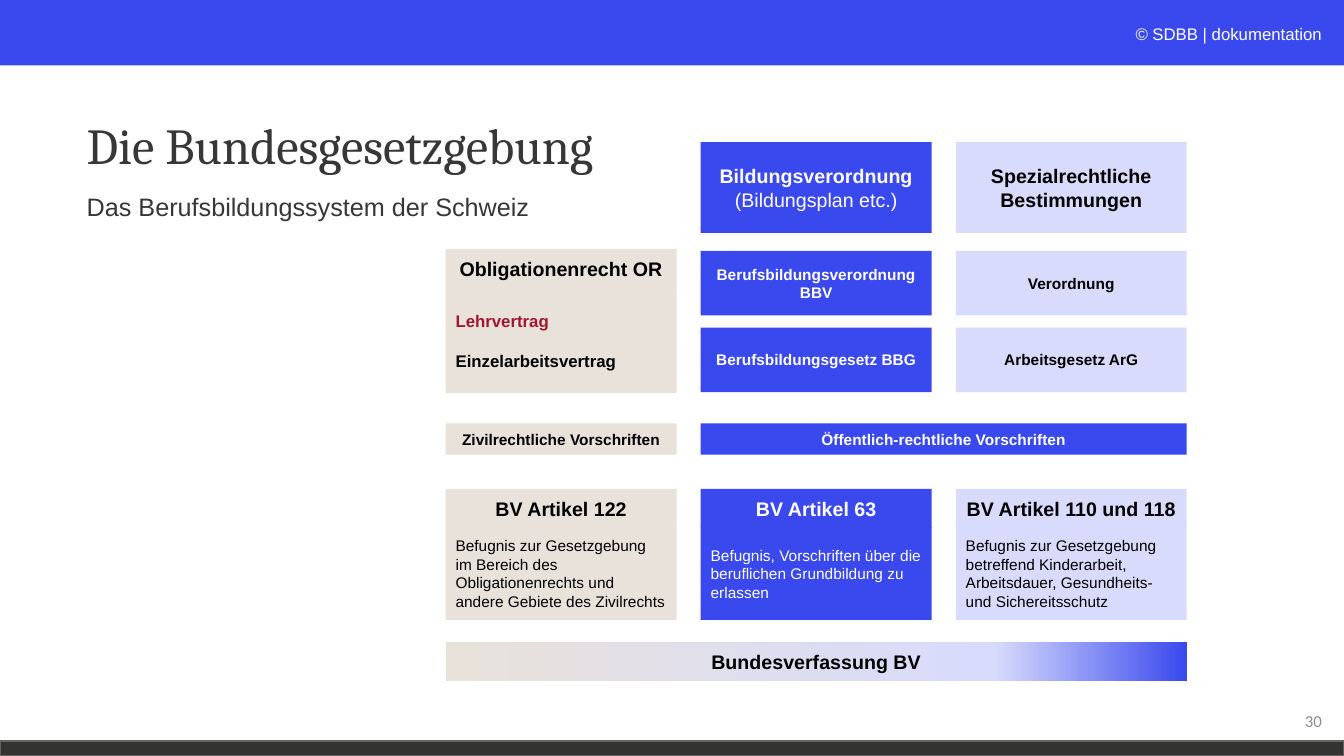
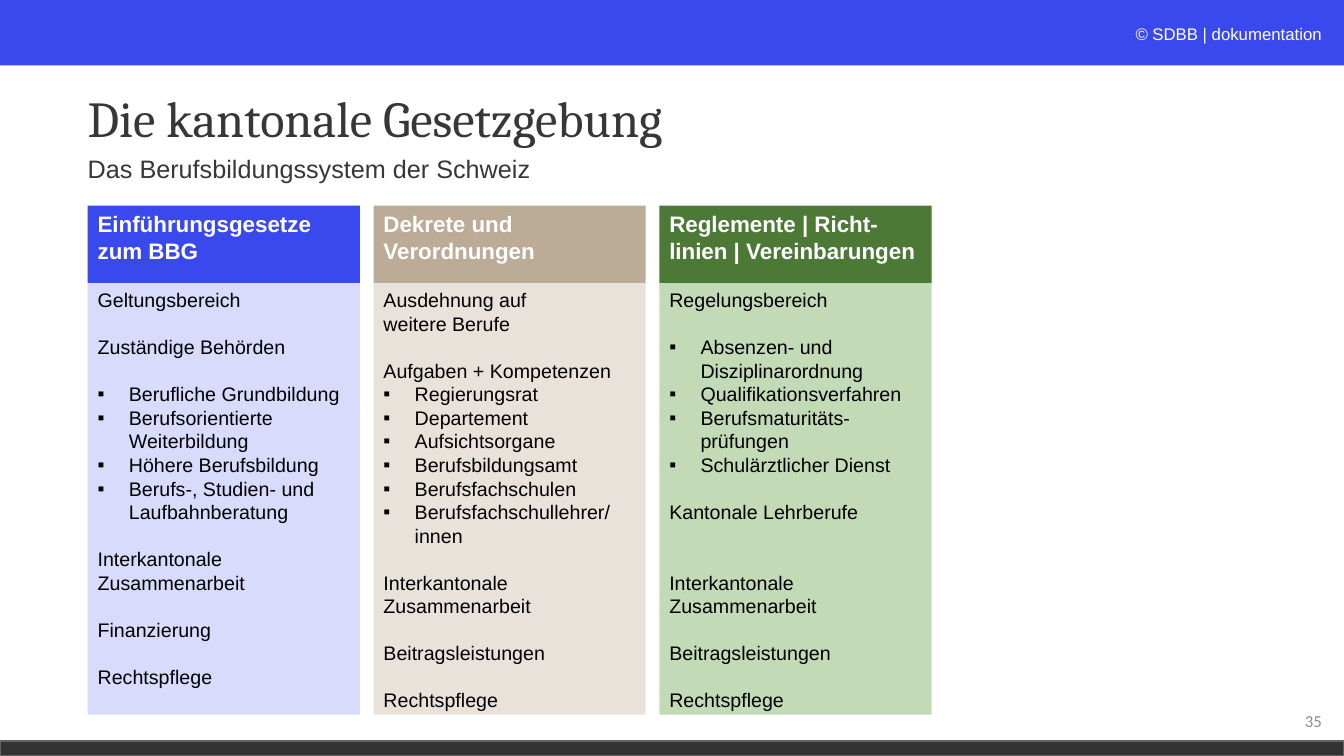
import copy
import dataclasses
import typing

import lxml.etree
import pptx
import pptx.dml.color
import pptx.enum.shapes
import pptx.enum.text
import pptx.oxml.ns
import pptx.util

Inches = pptx.util.Inches
Pt = pptx.util.Pt
qn = pptx.oxml.ns.qn
ALIGN = pptx.enum.text.PP_ALIGN
ANCHOR = pptx.enum.text.MSO_ANCHOR


@dataclasses.dataclass(frozen=True)
class Theme:
    blue: str = "3A49EE"
    lavender: str = "D8DBFC"
    sand: str = "E8E2DB"
    taupe: str = "BCAB96"
    green: str = "4C7936"
    mint: str = "C2DAB6"
    red: str = "A11731"
    black: str = "000000"
    white: str = "FFFFFF"
    near_white: str = "FCFDFE"
    title: str = "373737"
    footer: str = "333333"
    footer_line: str = "666360"
    number: str = "8C8C8C"
    body_font: str = "Arial"
    title_font: str = "Cambria"
    number_font: str = "Calibri"
    title_size: int = 36
    subtitle_size: int = 18
    column_size: int = 16
    head_size: int = 14
    note_size: int = 12
    text_size: int = 11


T = Theme()
LINE = 1.2
SUBTITLE = "Das Berufsbildungssystem der Schweiz"


class Line(typing.NamedTuple):
    text: str
    size: int = T.text_size
    bold: bool = False
    center: bool = False
    gap: int = 0
    bullet: bool = False
    color: typing.Optional[str] = None


class Card(typing.NamedTuple):
    col: int
    top: float
    height: float
    lines: list[Line]
    span: int = 1


class Column(typing.NamedTuple):
    head: str
    dark: str
    light: str
    lines: list[Line]


def head(text: str, size: int = T.text_size, bold: bool = True) -> Line:
    return Line(text, size, bold, center=True)


def item(text: str, gap: int = 0) -> Line:
    return Line(text, T.head_size, gap=gap)


def bullet(text: str, gap: int = 0) -> Line:
    return Line(text, T.head_size, gap=gap, bullet=True)


def rgb(value: str) -> pptx.dml.color.RGBColor:
    return pptx.dml.color.RGBColor.from_string(value)


def set_bullet(p, char: typing.Optional[str]) -> None:
    pPr = p._p.get_or_add_pPr()
    indent = Inches(0.31) if char else 0
    pPr.set("marL", str(indent))
    pPr.set("indent", str(-indent))
    if char:
        lxml.etree.SubElement(pPr, qn("a:buFont")).set("typeface", T.body_font)
        lxml.etree.SubElement(pPr, qn("a:buChar")).set("char", char)
    else:
        lxml.etree.SubElement(pPr, qn("a:buNone"))


def write(tf, text: str, *, size: int, color: str, font: str = T.body_font,
          bold: bool = False, italic: bool = False, align=ALIGN.LEFT,
          before: float = 0, spacing: float = 1.0, char: typing.Optional[str] = None,
          p=None):
    if p is None:
        p = tf.paragraphs[0] if not tf.text else tf.add_paragraph()
        set_bullet(p, char)
        p.alignment = align
        p.space_before = Pt(before)
        p.line_spacing = spacing
    for i, part in enumerate(text.split("\n")):
        if i:
            p.add_line_break()
        r = p.add_run()
        r.text = part
        r.font.name = font
        r.font.size = Pt(size)
        r.font.bold = bold
        r.font.italic = italic
        r.font.color.rgb = rgb(color)
    return p


def write_lines(tf, lines: list[Line], ink: str) -> None:
    for line in lines:
        write(tf, line.text, size=line.size, color=line.color or ink, bold=line.bold,
              align=ALIGN.CENTER if line.center else ALIGN.LEFT,
              before=line.gap * line.size * LINE, char="▪" if line.bullet else None)


def add_box(slide, left: float, top: float, width: float, height: float, fill: str,
            anchor=ANCHOR.MIDDLE):
    sp = slide.shapes.add_shape(pptx.enum.shapes.MSO_SHAPE.RECTANGLE, Inches(left),
                                Inches(top), Inches(width), Inches(height))
    sp.shadow.inherit = False
    sp.fill.solid()
    sp.fill.fore_color.rgb = rgb(fill)
    sp.line.fill.background()
    sp.text_frame.word_wrap = True
    sp.text_frame.vertical_anchor = anchor
    return sp


def add_label(slide, left: float, top: float, width: float, height: float):
    sp = slide.shapes.add_textbox(Inches(left), Inches(top), Inches(width), Inches(height))
    sp.text_frame.word_wrap = True
    return sp


def set_gradient(sp, stops: list[tuple[float, str]]) -> None:
    sp.fill.gradient()
    sp.fill.gradient_angle = 0
    gs_list = sp.element.spPr.find(".//" + qn("a:gsLst"))
    while len(gs_list) < len(stops):
        gs_list.insert(1, copy.deepcopy(gs_list[0]))
    for stop, (position, color) in zip(sp.fill.gradient_stops, stops):
        stop.position = position
        stop.color.rgb = rgb(color)


def brand_layout(layout, slide) -> None:
    band = add_box(slide, 0, 0, 13.33, 0.65, T.blue)
    footer = add_box(slide, 0, 7.35, 13.33, 0.15, T.footer)
    footer.line.color.rgb = rgb(T.footer_line)
    footer.line.width = Pt(1)
    credit = add_label(slide, 8.62, 0.19, 4.59, 0.3)
    tf = credit.text_frame
    p = write(tf, "© ", size=T.note_size, color=T.near_white, italic=True, align=ALIGN.RIGHT)
    write(tf, "SDBB | dokumentation", size=T.note_size, color=T.white, p=p)
    for sp in (band, footer, credit):
        layout.shapes.element.append(sp.element)


def place(sp, left: float, top: float, width: float, height: float, anchor):
    sp.left, sp.top, sp.width, sp.height = map(Inches, (left, top, width, height))
    tf = sp.text_frame
    tf.auto_size = pptx.enum.text.MSO_AUTO_SIZE.NONE
    tf.word_wrap = True
    tf.vertical_anchor = anchor
    return tf


def add_frame(slide, title: str, number: str, left: float, top: float, sub_top: float) -> None:
    tf = place(slide.shapes.title, left, top, 8.82, 1.45, ANCHOR.MIDDLE)
    write(tf, title, size=T.title_size, color=T.title, font=T.title_font, spacing=0.9)
    tf = place(slide.placeholders[1], left, sub_top, 8.81, 0.54, ANCHOR.TOP)
    write(tf, SUBTITLE, size=T.subtitle_size, color=T.title, spacing=0.9)
    tf = add_label(slide, 10.21, 6.95, 3, 0.4).text_frame
    tf.vertical_anchor = ANCHOR.MIDDLE
    write(tf, number, size=T.note_size, color=T.number, font=T.number_font, align=ALIGN.RIGHT)


def draw_federal(slide) -> None:
    left, width, pitch = 4.42, 2.29, 2.53
    styles = [(T.sand, T.black), (T.blue, T.white), (T.lavender, T.black)]
    cards = [
        Card(0, 2.47, 0.39, [head("Obligationenrecht OR", T.head_size)]),
        Card(0, 2.86, 1.04, [
            Line("Lehrvertrag", T.note_size, True, color=T.red),
            Line("Einzelarbeitsvertrag", T.note_size, True, gap=1)]),
        Card(1, 1.41, 0.9, [
            head("Bildungsverordnung", T.head_size),
            head("(Bildungsplan etc.)", T.head_size, False)]),
        Card(2, 1.41, 0.9, [head("Spezialrechtliche Bestimmungen", T.head_size)]),
        Card(1, 2.49, 0.64, [head("Berufsbildungsverordnung BBV")]),
        Card(2, 2.49, 0.64, [head("Verordnung")]),
        Card(1, 3.25, 0.64, [head("Berufsbildungsgesetz BBG")]),
        Card(2, 3.25, 0.64, [head("Arbeitsgesetz ArG")]),
        Card(0, 4.2, 0.31, [head("Zivilrechtliche Vorschriften")]),
        Card(1, 4.2, 0.31, [head("Öffentlich-rechtliche Vorschriften")], 2),
    ]
    articles = [
        ("BV Artikel 122", "Befugnis zur Gesetzgebung im Bereich des Obligationenrechts "
                           "und andere Gebiete des Zivilrechts"),
        ("BV Artikel 63", "Befugnis, Vorschriften über die beruflichen Grundbildung "
                          "zu erlassen"),
        ("BV Artikel 110 und 118", "Befugnis zur Gesetzgebung betreffend Kinderarbeit, "
                                   "Arbeitsdauer, Gesundheits- und Sichereitsschutz"),
    ]
    for col, (name, text) in enumerate(articles):
        cards.append(Card(col, 4.85, 0.39, [head(name, T.head_size)]))
        cards.append(Card(col, 5.23, 0.92, [Line(text)]))
    cards.append(Card(0, 6.37, 0.39, [head("Bundesverfassung BV", T.head_size)], 3))
    for card in cards:
        fill, ink = styles[card.col]
        sp = add_box(slide, left + card.col * pitch, card.top,
                     width + (card.span - 1) * pitch, card.height, fill)
        write_lines(sp.text_frame, card.lines, ink)
        if card.span == len(styles):
            set_gradient(sp, [(0, T.sand), (0.74, T.lavender), (1, T.blue)])


def draw_cantonal(slide) -> None:
    left, width, pitch = 0.87, 2.7, (6.54 - 0.87) / 2
    columns = [
        Column("Einführungsgesetze zum BBG", T.blue, T.lavender, [
            item("Geltungsbereich"), item("Zuständige Behörden", 1),
            bullet("Berufliche Grundbildung", 1), bullet("Berufsorientierte Weiterbildung"),
            bullet("Höhere Berufsbildung"), bullet("Berufs-, Studien- und Laufbahnberatung"),
            item("Interkantonale Zusammenarbeit", 1), item("Finanzierung", 1),
            item("Rechtspflege", 1)]),
        Column("Dekrete und Verordnungen", T.taupe, T.sand, [
            item("Ausdehnung auf"), item("weitere Berufe"), item("Aufgaben + Kompetenzen", 1),
            bullet("Regierungsrat"), bullet("Departement"), bullet("Aufsichtsorgane"),
            bullet("Berufsbildungsamt"), bullet("Berufsfachschulen"),
            bullet("Berufsfachschullehrer/\ninnen"),
            item("Interkantonale Zusammenarbeit", 1), item("Beitragsleistungen", 1),
            item("Rechtspflege", 1)]),
        Column("Reglemente | Richt-linien | Vereinbarungen", T.green, T.mint, [
            item("Regelungsbereich"), bullet("Absenzen- und Disziplinarordnung", 1),
            bullet("Qualifikationsverfahren"), bullet("Berufsmaturitäts-prüfungen"),
            bullet("Schulärztlicher Dienst"), item("Kantonale Lehrberufe", 1),
            item("Interkantonale Zusammenarbeit", 2), item("Beitragsleistungen", 1),
            item("Rechtspflege", 1)]),
    ]
    for i, column in enumerate(columns):
        x = left + i * pitch
        sp = add_box(slide, x, 2.04, width, 0.77, column.dark, ANCHOR.TOP)
        write_lines(sp.text_frame, [Line(column.head, T.column_size, True)], T.white)
        sp = add_box(slide, x, 2.81, width, 4.28, column.light, ANCHOR.TOP)
        write_lines(sp.text_frame, column.lines, T.black)


def main() -> None:
    prs = pptx.Presentation()
    prs.slide_width, prs.slide_height = Inches(13.33), Inches(7.5)
    layout = prs.slide_layouts[1]
    federal, cantonal = (prs.slides.add_slide(layout) for _ in range(2))
    brand_layout(layout, federal)
    add_frame(federal, "Die Bundesgesetzgebung", "30", 0.76, 0.75, 1.88)
    draw_federal(federal)
    add_frame(cantonal, "Die kantonale Gesetzgebung", "35", 0.77, 0.48, 1.5)
    draw_cantonal(cantonal)
    prs.save("out.pptx")


if __name__ == "__main__":
    main()
